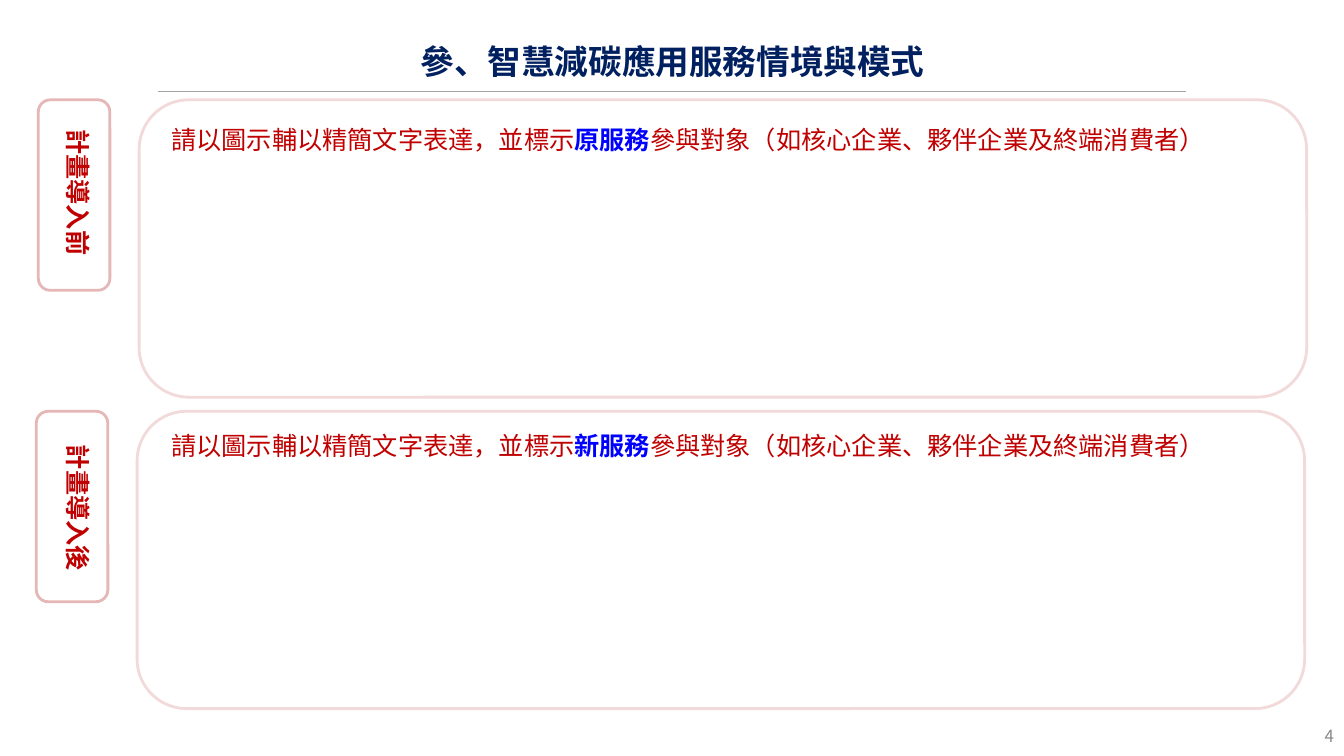
from lxml.etree import SubElement
from pptx import Presentation
from pptx.dml.color import RGBColor
from pptx.enum.shapes import MSO_CONNECTOR, MSO_SHAPE
from pptx.enum.text import MSO_ANCHOR, PP_ALIGN
from pptx.oxml.ns import qn
from pptx.util import Inches, Pt

FONT = "Noto Sans CJK TC"
RED = "C00000"
BLUE = "0000FF"


def color(value):
    """Turn a hex string into a colour."""
    return RGBColor.from_string(value)


def add_text(s, box, parts, size, align=PP_ALIGN.LEFT, anchor=MSO_ANCHOR.TOP):
    """Add one paragraph of (text, colour, bold) parts in a box."""
    sp = s.shapes.add_textbox(*map(Inches, box))
    tf = sp.text_frame
    tf.word_wrap = True
    tf.vertical_anchor = anchor
    p = tf.paragraphs[0]
    p.alignment = align
    for text, hex_color, bold in parts:
        r = p.add_run()
        r.text = text
        r.font.size = Pt(size)
        r.font.bold = bold
        r.font.color.rgb = color(hex_color)
        r.font.name = FONT
        SubElement(r.font._element, qn("a:ea"), typeface=FONT)
    return sp


def add_frame(s, box, line):
    """Add an unfilled rounded outline."""
    sp = s.shapes.add_shape(MSO_SHAPE.ROUNDED_RECTANGLE, *map(Inches, box))
    sp.adjustments[0] = 0.167
    sp.shadow.inherit = False
    sp.fill.background()
    sp.line.color.rgb = color(line)
    sp.line.width = Pt(2)


def add_header(s, x, y, w, h):
    """Add the slide title with the rule below it."""
    add_text(s, (x, y, w, h), [("參、智慧減碳應用服務情境與模式", "002060", True)],
             24, PP_ALIGN.CENTER, MSO_ANCHOR.MIDDLE)
    rule_y = Inches(y + h + 0.01)
    rule = s.shapes.add_connector(
        MSO_CONNECTOR.STRAIGHT, Inches(x - 0.69), rule_y, Inches(x + w + 0.68), rule_y)
    rule.line.color.rgb = color("A5A5A5")
    rule.line.width = Pt(0.75)
    SubElement(rule._element.spPr, qn("a:effectLst"))


def add_stage(s, x, y, label, label_dy, service, note_dy):
    """Add one stage: a vertical label and a panel with its instruction."""
    add_frame(s, (x, y, 0.71, 1.89), "E5B8B7")
    tag = add_text(s, (-0.1, y + label_dy, 1.65, 0.5), [(label, RED, True)], 18)
    tag.rotation = 90
    add_frame(s, (x + 1.0, y, 11.58, 2.95), "F2DADA")
    note = [("請以圖示輔以精簡文字表達，並標示", RED, False),
            (service, BLUE, True),
            ("參與對象（如核心企業、夥伴企業及終端消費者）", RED, False)]
    add_text(s, (1.6, y + note_dy, 11.18, 0.4), note, 18)


def main():
    """Build and save the slide."""
    prs = Presentation()
    prs.slide_width, prs.slide_height = Inches(13.33), Inches(7.5)
    s = prs.slides.add_slide(prs.slide_layouts[6])
    add_header(s, 2.26, 0.31, 8.82, 0.59)
    add_stage(s, 0.38, 0.99, "計畫導入前", 0.77, "原服務", 0.19)
    add_stage(s, 0.36, 4.08, "計畫導入後", 0.81, "新服務", 0.14)
    add_text(s, (12.66, 7.1, 0.67, 0.4), [("4", "888888", False)],
             12, PP_ALIGN.RIGHT, MSO_ANCHOR.MIDDLE)
    prs.save("out.pptx")


if __name__ == "__main__":
    main()
